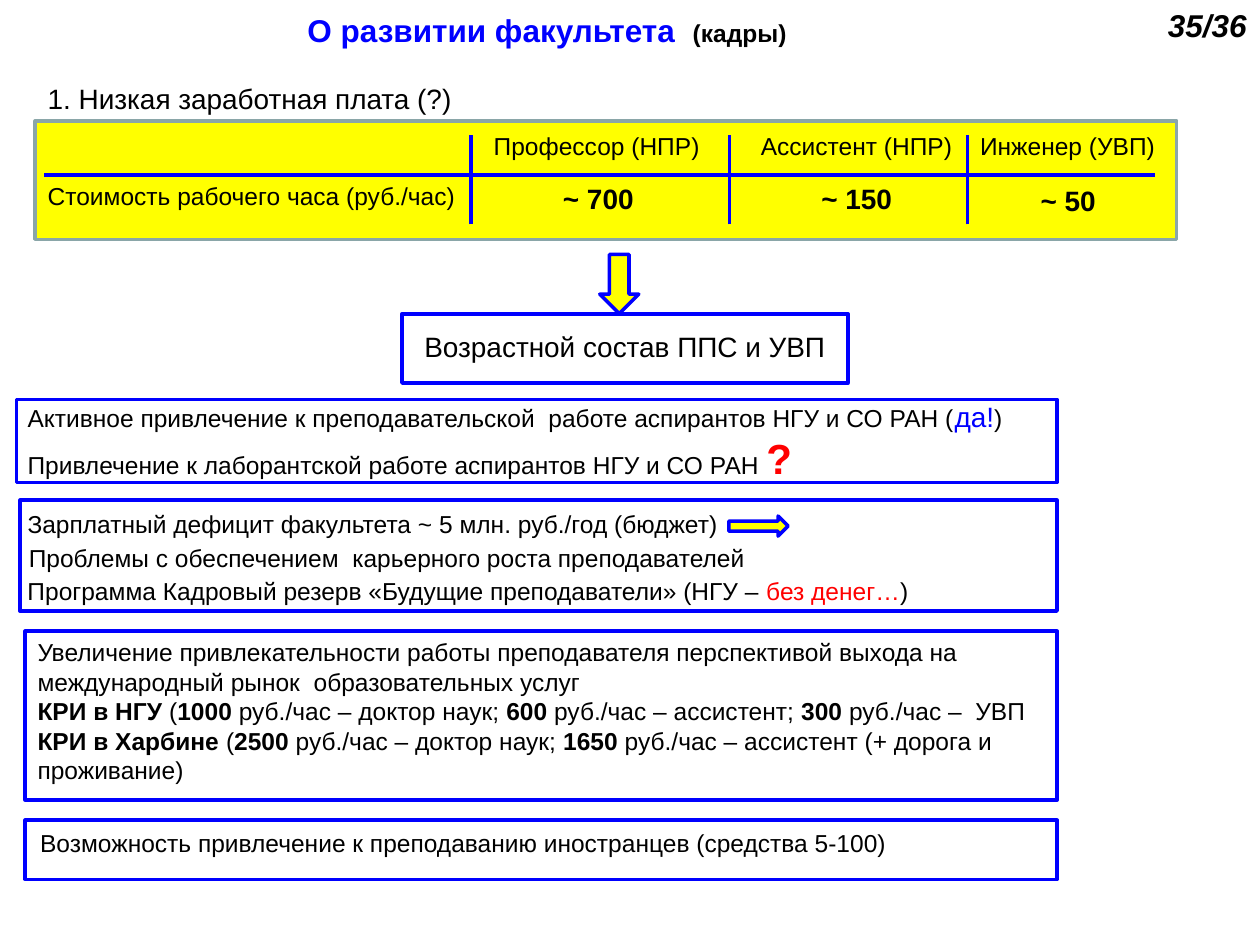
from lxml.etree import SubElement
from pptx import Presentation
from pptx.dml.color import RGBColor
from pptx.enum.shapes import MSO_CONNECTOR, MSO_SHAPE
from pptx.enum.text import MSO_ANCHOR, MSO_AUTO_SIZE, PP_ALIGN
from pptx.oxml.ns import qn
from pptx.util import Inches, Pt

BLACK = RGBColor(0, 0, 0)
BLUE = RGBColor(0, 0, 255)
RED = RGBColor(255, 0, 0)
YELLOW = RGBColor(255, 255, 0)
GRAY = RGBColor(0x8A, 0xA6, 0xA8)


def write_text(box, paragraphs, size=14, wrap=False):
    frame = box.text_frame
    frame.word_wrap = wrap
    frame.auto_size = MSO_AUTO_SIZE.SHAPE_TO_FIT_TEXT
    frame.vertical_anchor = MSO_ANCHOR.TOP
    for index, spans in enumerate(paragraphs):
        para = frame.paragraphs[0] if index == 0 else frame.add_paragraph()
        para.alignment = PP_ALIGN.LEFT
        for text, style in spans:
            span = para.add_run()
            span.text = text
            span.font.name = "Arial"
            span.font.size = Pt(style.get("size", size))
            span.font.bold = style.get("bold", False)
            span.font.italic = style.get("italic", False)
            span.font.color.rgb = style.get("color", BLACK)


def add_outline(kind, left, top, width, height, fill=None, line=BLUE):
    shape = page.shapes.add_shape(
        kind, Inches(left), Inches(top), Inches(width), Inches(height))
    shape.shadow.inherit = False
    if fill is None:
        shape.fill.background()
    else:
        shape.fill.solid()
        shape.fill.fore_color.rgb = fill
    shape.line.color.rgb = line
    shape.line.width = Pt(2)
    return shape


deck = Presentation()
deck.slide_width = Inches(10)
deck.slide_height = Inches(7.5)
page = deck.slides.add_slide(deck.slide_layouts[5])

PLAIN = {}
BOLD = {"bold": True}

title = page.shapes.title
title.left, title.top = Inches(2.34), Inches(0.04)
title.width, title.height = Inches(5.73), Inches(0.4)
write_text(title, [[("О развитии факультета  ", {"size": 18, "bold": True, "color": BLUE}),
                    ("(кадры)", BOLD)]], wrap=True)

add_outline(MSO_SHAPE.RECTANGLE, 0.28, 0.96, 9.06, 0.94, YELLOW, GRAY)

rules = [(0.35, 1.39, 9.17, 1.39)] + [(x, 1.78, x, 1.07) for x in (3.74, 5.79, 7.68)]
for start_x, start_y, end_x, end_y in rules:
    rule = page.shapes.add_connector(
        MSO_CONNECTOR.STRAIGHT, Inches(start_x), Inches(start_y), Inches(end_x), Inches(end_y))
    rule.line.color.rgb = BLUE
    rule.line.width = Pt(2)
    SubElement(rule._element.spPr, qn("a:effectLst"))

add_outline(MSO_SHAPE.DOWN_ARROW, 4.76, 2.02, 0.31, 0.47, YELLOW)
deficit_arrow = add_outline(MSO_SHAPE.DOWN_ARROW, 5.94, 3.94, 0.16, 0.47, YELLOW)
deficit_arrow.rotation = 270

for frame_place in [
    (3.19, 2.49, 3.54, 0.55),
    (0.13, 3.17, 8.26, 0.66),
    (0.16, 3.97, 8.23, 0.88),
    (0.2, 5.01, 8.19, 1.34),
    (0.2, 6.51, 8.19, 0.47),
]:
    add_outline(MSO_SHAPE.RECTANGLE, *frame_place)

labels = [
    (9.17, 0, 0.83, 0.4, 18, False, "35/36", {"bold": True, "italic": True}),
    (0.28, 0.6, 3.45, 0.37, 16, False, "1. Низкая заработная плата (?)", PLAIN),
    (3.82, 0.99, 1.85, 0.34, 14, False, "Профессор (НПР)", PLAIN),
    (5.94, 0.99, 1.73, 0.34, 14, False, "Ассистент (НПР)", PLAIN),
    (7.68, 0.99, 1.6, 0.34, 14, False, "Инженер (УВП)", PLAIN),
    (0.28, 1.39, 4.27, 0.34, 14, True, "Стоимость рабочего часа (руб./час)", PLAIN),
    (4.37, 1.39, 0.77, 0.37, 16, False, "~ 700", BOLD),
    (6.42, 1.39, 0.77, 0.37, 16, False, "~ 150", BOLD),
    (8.16, 1.41, 0.65, 0.37, 16, False, "~ 50", BOLD),
    (3.27, 2.57, 3.43, 0.37, 16, False, "Возрастной состав ППС и УВП", PLAIN),
    (0.12, 3.99, 5.71, 0.34, 14, False,
     "Зарплатный дефицит факультета ~ 5 млн. руб./год (бюджет)", PLAIN),
    (0.13, 4.26, 6.38, 0.34, 14, True,
     "Проблемы с обеспечением  карьерного роста преподавателей", PLAIN),
    (0.22, 6.52, 6.96, 0.34, 14, False,
     "Возможность привлечение к преподаванию иностранцев (средства 5-100)", PLAIN),
]
texts = [(*label[:6], [[label[6:]]]) for label in labels]

texts += [
    (0.12, 3.12, 7.99, 0.77, 14, False, [
        [("Активное привлечение к преподавательской  работе аспирантов НГУ и СО РАН (", PLAIN),
         ("да!", {"size": 16, "color": BLUE}), (")", PLAIN)],
        [("Привлечение к лаборантской работе аспирантов НГУ и СО РАН ", PLAIN),
         ("?", {"size": 24, "color": RED, "bold": True})],
    ]),
    (0.12, 4.52, 7.23, 0.34, 14, False, [
        [("Программа Кадровый резерв «Будущие преподаватели» (НГУ – ", PLAIN),
         ("без денег…", {"color": RED}), (")", PLAIN)],
    ]),
    (0.2, 5.01, 8.27, 1.28, 14, True, [
        [("Увеличение привлекательности работы преподавателя перспективой выхода на "
          "международный рынок  образовательных услуг", PLAIN)],
        [("КРИ в НГУ ", BOLD), ("(", PLAIN), ("1000 ", BOLD),
         ("руб./час – доктор наук; ", PLAIN), ("600", BOLD),
         (" руб./час – ассистент; ", PLAIN), ("300", BOLD), (" руб./час –  УВП", PLAIN)],
        [("КРИ в Харбине ", BOLD), ("(", PLAIN), ("2500", BOLD),
         (" руб./час – доктор наук; ", PLAIN), ("1650 ", BOLD),
         ("руб./час – ассистент (+ дорога и проживание)", PLAIN)],
    ]),
]
for left, top, width, height, size, wrap, paragraphs in texts:
    box = page.shapes.add_textbox(Inches(left), Inches(top), Inches(width), Inches(height))
    write_text(box, paragraphs, size, wrap)

deck.save("out.pptx")
